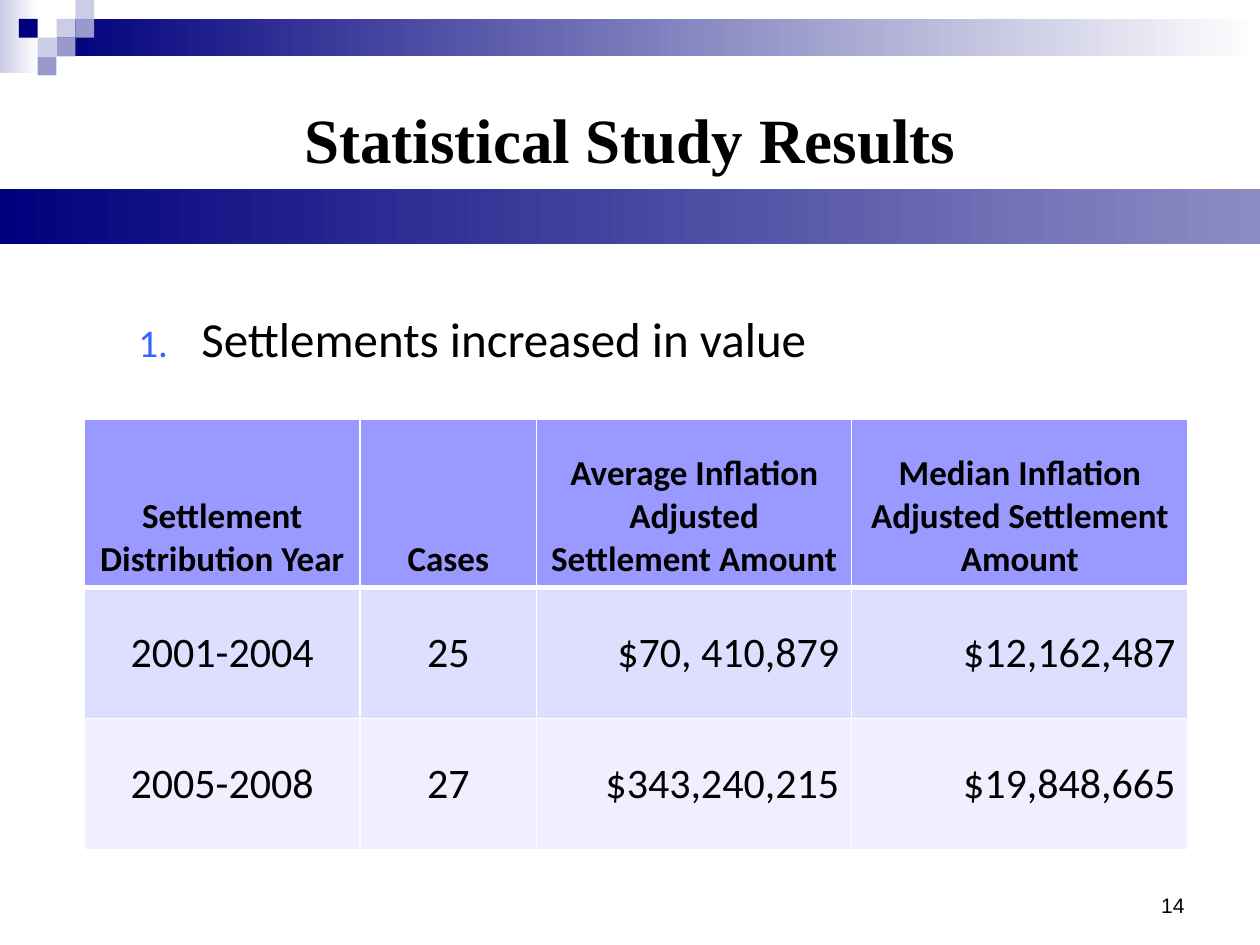
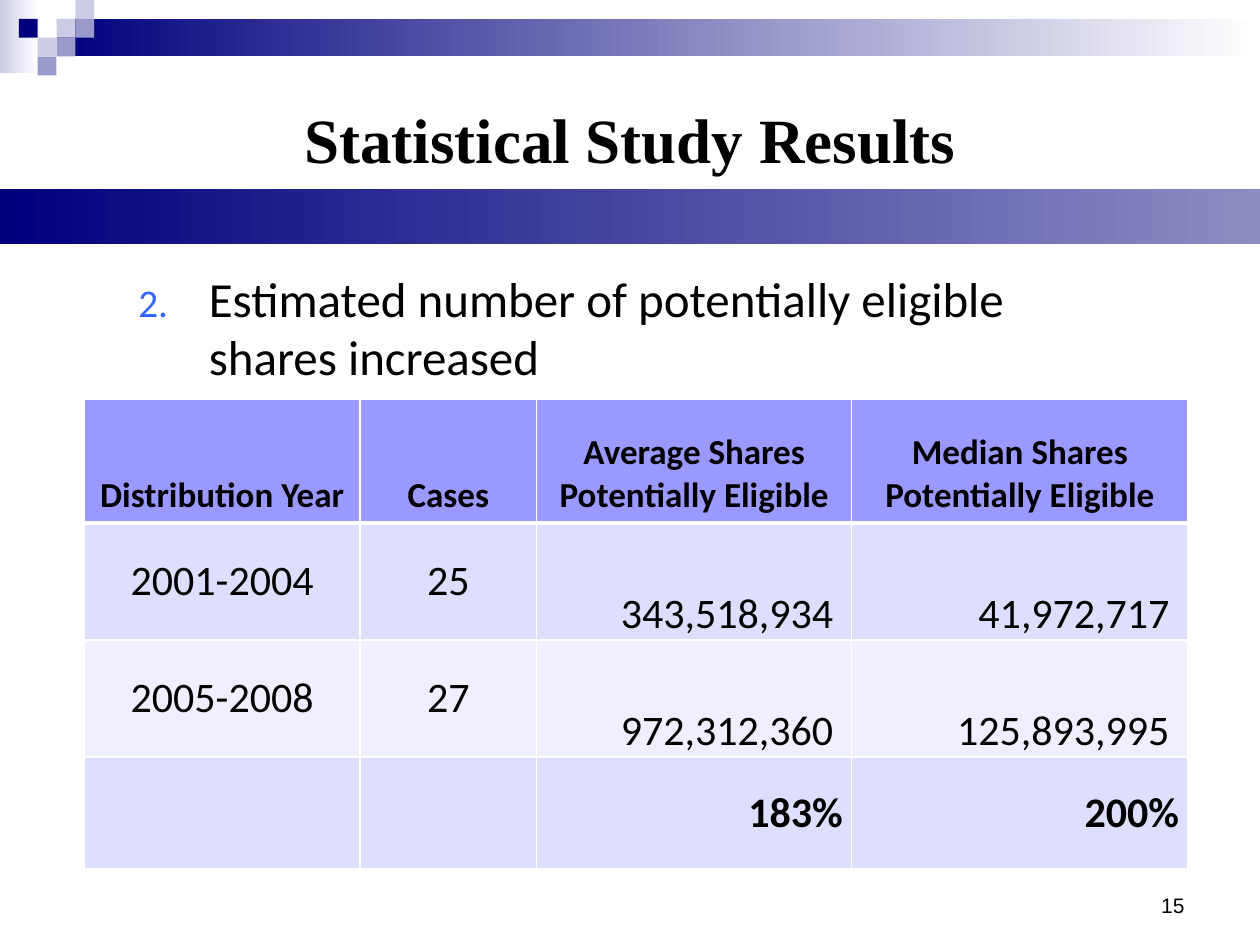
from lxml import etree
from pptx import Presentation
from pptx.dml.color import RGBColor
from pptx.enum.shapes import MSO_SHAPE
from pptx.enum.text import MSO_ANCHOR, PP_ALIGN
from pptx.oxml.ns import qn
from pptx.util import Cm, Pt

RECTANGLE = MSO_SHAPE.RECTANGLE
MIDDLE, BOTTOM = MSO_ANCHOR.MIDDLE, MSO_ANCHOR.BOTTOM
CENTER, RIGHT = PP_ALIGN.CENTER, PP_ALIGN.RIGHT

BLACK = RGBColor(0x00, 0x00, 0x00)
WHITE = RGBColor(0xFF, 0xFF, 0xFF)
NAVY = RGBColor(0x00, 0x00, 0x7D)
LAVENDER = RGBColor(0xCC, 0xCC, 0xE6)
PERIWINKLE = RGBColor(0x99, 0x99, 0xCC)
BAND_END = RGBColor(0x8C, 0x8C, 0xC4)
NUMBER_BLUE = RGBColor(0x33, 0x66, 0xFF)
HEADER_FILL = RGBColor(0x99, 0x99, 0xFF)
ROW_FILLS = [RGBColor(0xDE, 0xDE, 0xFF), RGBColor(0xEF, 0xEF, 0xFF)]

# Gradient bars: left, top, width, height, start, end
CORNER_BARS = [
    (0, 0, 0.79, 1.47, LAVENDER, WHITE),
    (1.14, 0.38, 24.26, 0.76, NAVY, WHITE),
]
TITLE_BAND = (0, 3.81, 25.4, 1.12, NAVY, BAND_END)

# Corner squares on a grid: column, row, colour
SQUARE = 0.38
SQUARES = [
    (3, 1, LAVENDER), (4, 0, LAVENDER), (4, 1, PERIWINKLE), (2, 2, LAVENDER),
    (1, 1, NAVY), (3, 2, PERIWINKLE), (2, 3, PERIWINKLE),
]

COLUMN_WIDTHS = [5.56, 3.56, 6.35, 6.78]

RESULTS = [
    {
        "page_number": 14,
        "finding": "Settlements increased in value",
        "number": 1, "body_top": 5.51, "body_height": 7.26,
        "indent": (2.54, -1.27), "line_spacing": 1.5,
        "table_top": 8.46, "row_heights": [3.38, 2.64, 2.64],
        "amount_anchor": MIDDLE, "amount_margins": (0.25, 0.13),
        "rows": [
            ["Settlement Distribution Year", "Cases",
             "Average Inflation Adjusted Settlement Amount",
             "Median Inflation Adjusted Settlement Amount"],
            ["2001-2004", "25", "$70, 410,879", "$12,162,487"],
            ["2005-2008", "27", "$343,240,215", "$19,848,665"],
        ],
    },
    {
        "page_number": 15,
        "finding": "Estimated number of potentially eligible shares increased",
        "number": 2, "body_top": 5.28, "body_height": 5.69,
        "indent": (2.69, -1.42), "line_spacing": 1.0,
        "table_top": 8.05, "row_heights": [2.49, 2.36, 2.36, 2.26],
        "amount_anchor": BOTTOM, "amount_margins": (0.37, 0),
        "rows": [
            ["Distribution Year", "Cases",
             "Average Shares Potentially Eligible",
             "Median Shares Potentially Eligible"],
            ["2001-2004", "25", "343,518,934", "41,972,717"],
            ["2005-2008", "27", "972,312,360", "125,893,995"],
            ["", "", "183%", "200%"],
        ],
    },
]


def add_bar(page, left, top, width, height, start, end=None):
    bar = page.shapes.add_shape(RECTANGLE, Cm(left), Cm(top), Cm(width), Cm(height))
    bar.shadow.inherit = False
    bar.line.fill.background()
    if end is None:
        bar.fill.solid()
        bar.fill.fore_color.rgb = start
    else:
        bar.fill.gradient()
        bar.fill.gradient_angle = 0
        for stop, colour in zip(bar.fill.gradient_stops, (start, end)):
            stop.color.rgb = colour


def write(para, text, font_name, size, bold=False):
    para.add_run().text = text
    para.font.name = font_name
    para.font.size = Pt(size)
    para.font.bold = bold
    para.font.color.rgb = BLACK


deck = Presentation()
deck.slide_width, deck.slide_height = Cm(25.4), Cm(19.05)

for result in RESULTS:
    page = deck.slides.add_slide(deck.slide_layouts[6])

    # Corner ornament and band under the title
    for bar in CORNER_BARS:
        add_bar(page, *bar)
    for column, row, colour in SQUARES:
        add_bar(page, column * SQUARE, row * SQUARE, SQUARE, SQUARE, colour)
    add_bar(page, *TITLE_BAND)

    # Page number
    box = page.shapes.add_textbox(Cm(18.21), Cm(17.35), Cm(5.92), Cm(1.27))
    box.text_frame.word_wrap = True
    box.text_frame.vertical_anchor = BOTTOM
    para = box.text_frame.paragraphs[0]
    para.alignment = RIGHT
    write(para, str(result["page_number"]), "Arial", 12)

    # Title
    box = page.shapes.add_textbox(0, Cm(2.13), Cm(25.4), Cm(1.57))
    box.text_frame.word_wrap = True
    box.text_frame.vertical_anchor = MIDDLE
    para = box.text_frame.paragraphs[0]
    para.alignment = CENTER
    para.line_spacing = 0.85
    write(para, "Statistical Study Results", "Times New Roman", 36, bold=True)

    # Numbered finding
    box = page.shapes.add_textbox(Cm(1.27), Cm(result["body_top"]),
                                  Cm(20.88), Cm(result["body_height"]))
    box.text_frame.word_wrap = True
    para = box.text_frame.paragraphs[0]
    para.line_spacing = result["line_spacing"]
    properties = para._p.get_or_add_pPr()
    margin, indent = result["indent"]
    properties.set("marL", str(Cm(margin)))
    properties.set("indent", str(Cm(indent)))
    bullet_colour = etree.SubElement(properties, qn("a:buClr"))
    etree.SubElement(bullet_colour, qn("a:srgbClr"), val=str(NUMBER_BLUE))
    etree.SubElement(properties, qn("a:buSzPct"), val="80000")
    etree.SubElement(properties, qn("a:buFont"), typeface="Calibri")
    etree.SubElement(properties, qn("a:buAutoNum"), type="arabicPeriod",
                     startAt=str(result["number"]))
    write(para, result["finding"], "Calibri", 28)

    # Results table
    rows = result["rows"]
    table = page.shapes.add_table(
        len(rows), len(COLUMN_WIDTHS), Cm(1.7), Cm(result["table_top"]),
        Cm(sum(COLUMN_WIDTHS)), Cm(sum(result["row_heights"]))).table
    for column, width in zip(table.columns, COLUMN_WIDTHS):
        column.width = Cm(width)
    for row, height in zip(table.rows, result["row_heights"]):
        row.height = Cm(height)

    for row_index, texts in enumerate(rows):
        is_header = row_index == 0
        is_change = texts[0] == ""
        for column_index, text in enumerate(texts):
            cell = table.cell(row_index, column_index)
            is_amount = column_index >= 2 and not is_header

            # White borders, thicker under the header
            cell_properties = cell._tc.get_or_add_tcPr()
            for side in ("L", "R", "T", "B"):
                thick = (row_index, side) in ((0, "B"), (1, "T"))
                line = etree.SubElement(cell_properties, qn(f"a:ln{side}"),
                                        w=str(Pt(3 if thick else 1)))
                line_fill = etree.SubElement(line, qn("a:solidFill"))
                etree.SubElement(line_fill, qn("a:srgbClr"), val=str(WHITE))

            cell.fill.solid()
            cell.fill.fore_color.rgb = (
                HEADER_FILL if is_header else ROW_FILLS[(row_index - 1) % 2])
            cell.vertical_anchor = BOTTOM if is_header else MIDDLE
            if is_amount and is_change:
                cell.margin_right = Cm(0.18)
            elif is_amount:
                cell.vertical_anchor = result["amount_anchor"]
                side_margin, end_margin = result["amount_margins"]
                cell.margin_right = Cm(side_margin)
                cell.margin_top = cell.margin_bottom = Cm(end_margin)

            if text:
                para = cell.text_frame.paragraphs[0]
                para.alignment = RIGHT if is_amount else CENTER
                write(para, text, "Calibri", 20 if is_header else 24,
                      bold=is_header or is_change)

deck.save("out.pptx")
